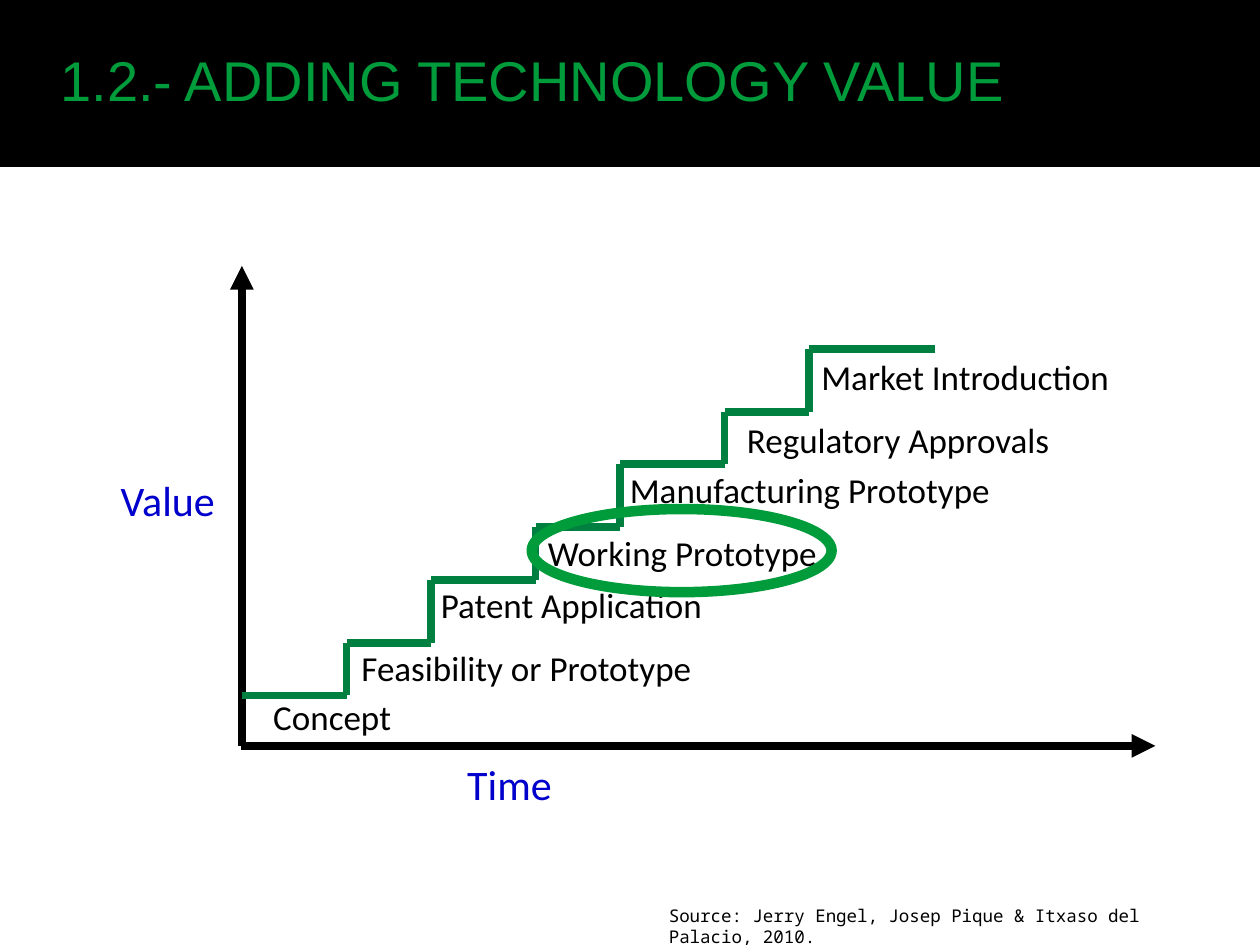
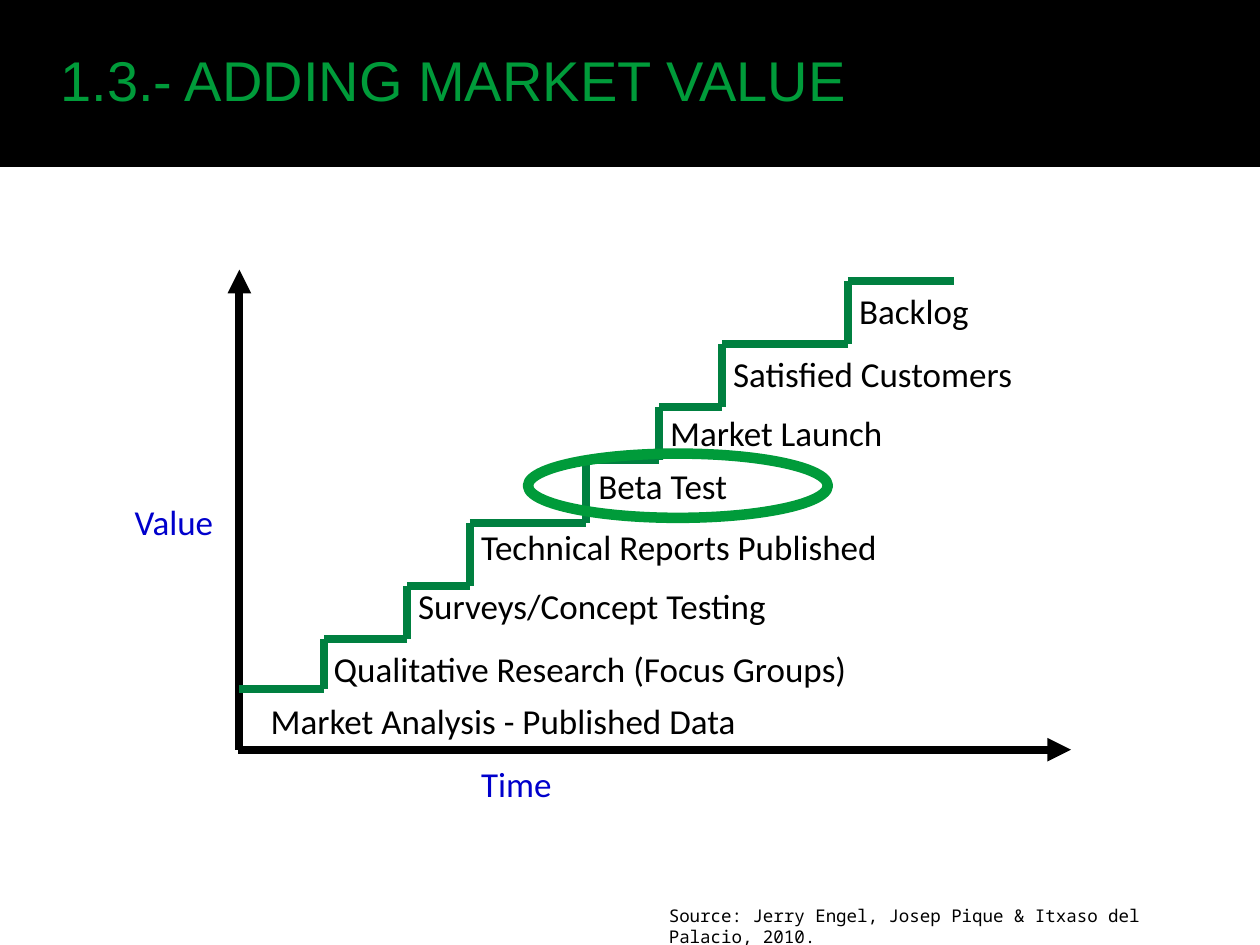
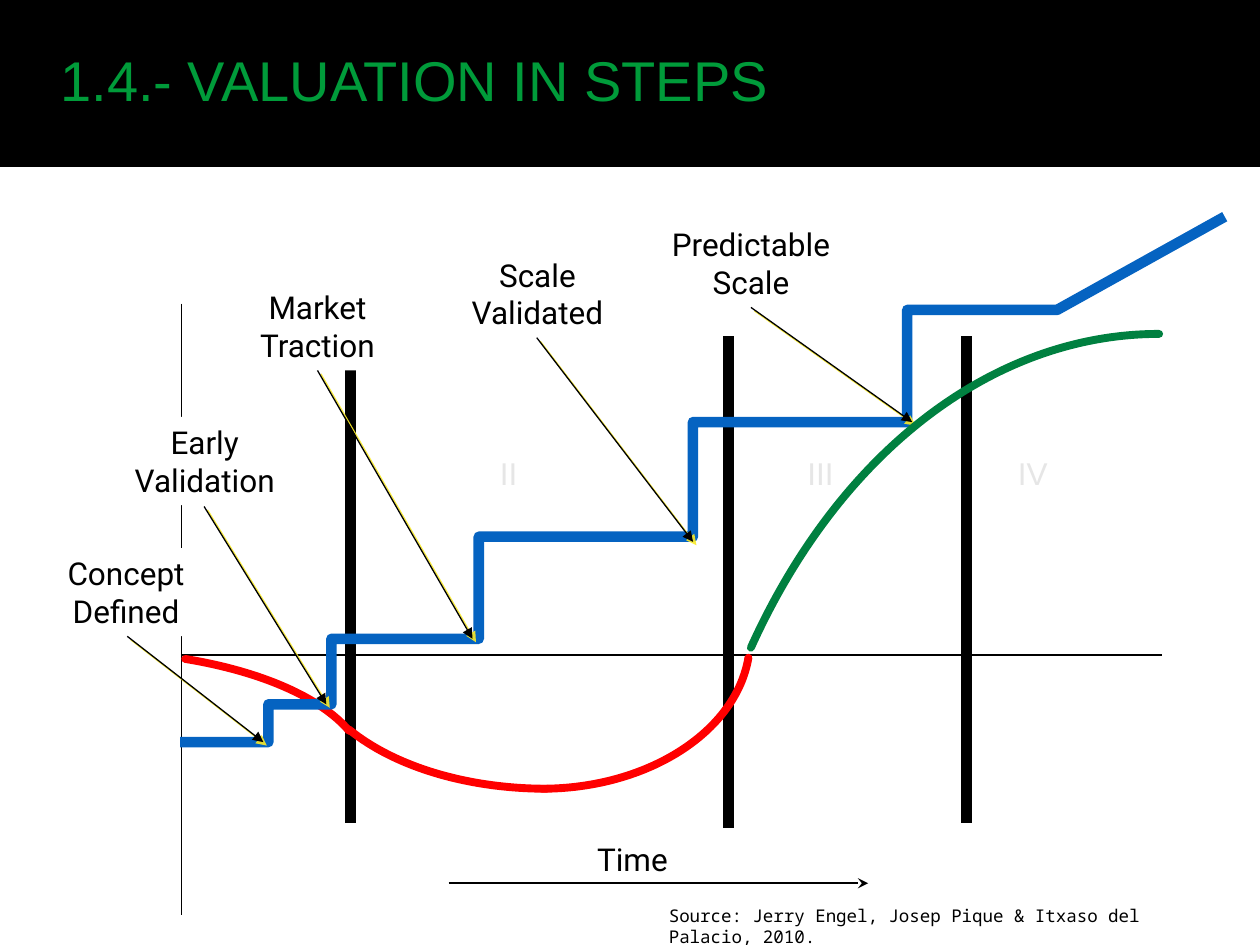
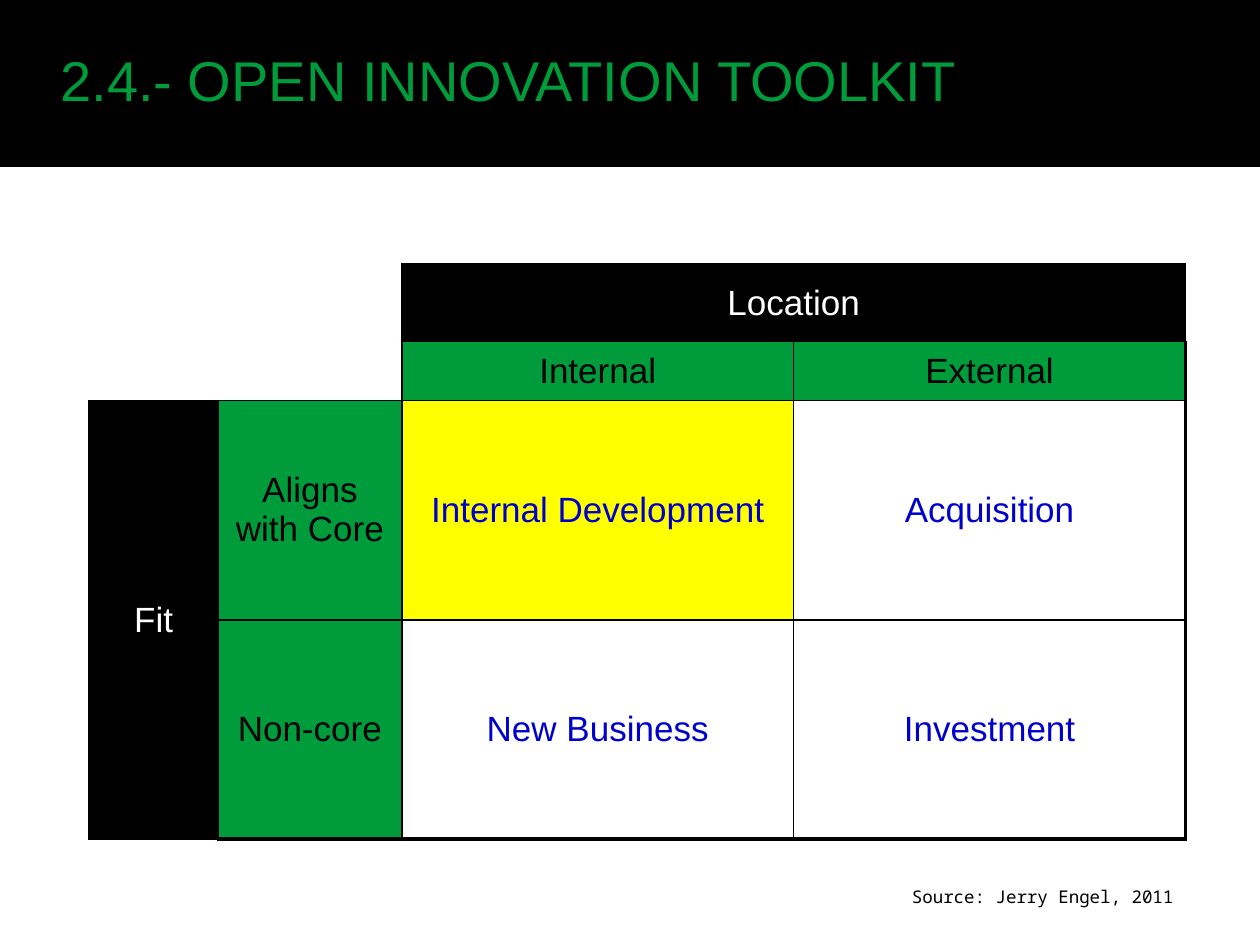
"""Build four slides on adding value in steps and on the open innovation toolkit."""
import pptx
import pptx.util
import pptx.dml.color
import pptx.enum.shapes
import pptx.enum.text
import pptx.oxml.ns
import lxml.etree

PX = 9144
INK = {"black": "000000", "white": "FFFFFF", "green": "009B3A", "step": "008040", "blue": "0000CC",
       "red": "FF0000", "climb": "0563C1", "yellow": "FFFF00", "glow": "F9EA28", "grey": "E6E6E6"}
RGB = {name: pptx.dml.color.RGBColor.from_string(code) for name, code in INK.items()}
Pt = pptx.util.Pt
qn = pptx.oxml.ns.qn
Align = pptx.enum.text.PP_ALIGN
Kind = pptx.enum.shapes.MSO_SHAPE
Fit = pptx.enum.text.MSO_AUTO_SIZE
Sub = lxml.etree.SubElement


def write(slide, words, box, size, font="Calibri", ink="black", align=Align.LEFT, wrap=False):
    """Add a text box in one style."""
    shape = slide.shapes.add_textbox(*[n * PX for n in box])
    frame = shape.text_frame
    frame.text = words
    frame.word_wrap = wrap
    frame.auto_size = Fit.SHAPE_TO_FIT_TEXT
    frame.paragraphs[0].alignment = align
    for run in frame.paragraphs[0].runs:
        run.font.size, run.font.name, run.font.color.rgb = Pt(size), font, RGB[ink]
    return shape


def draw(slide, ends, width, ink="black", tip=None, glow=False):
    """Add a straight line, with an arrowhead or a coloured shadow if asked."""
    line = slide.shapes.add_connector(pptx.enum.shapes.MSO_CONNECTOR.STRAIGHT, *[n * PX for n in ends])
    line.line.width = Pt(width)
    line.line.color.rgb = RGB[ink]
    props = line._element.spPr
    if tip:
        Sub(props.find(qn("a:ln")), qn("a:tailEnd"), type=tip)
    effect = Sub(props, qn("a:effectLst"))
    if glow:
        shade = Sub(effect, qn("a:outerShdw"), dist=str(Pt(2.8)), dir="2700000", rotWithShape="0")
        tone = Sub(shade, qn("a:srgbClr"), val=INK["glow"])
        Sub(tone, qn("a:alpha"), val="90000")


deck = pptx.Presentation()
deck.slide_width, deck.slide_height = 1000 * PX, 750 * PX

TITLES = [("1.2.- ADDING TECHNOLOGY VALUE", 776), ("1.3.- ADDING MARKET VALUE", 649),
          ("1.4.- VALUATION IN STEPS", 587), ("2.4.- OPEN INNOVATION TOOLKIT", 737)]
for words, wide in TITLES:
    slide = deck.slides.add_slide(deck.slide_layouts[5])
    band = slide.shapes.add_shape(Kind.RECTANGLE, 0, 0, 1000 * PX, 132 * PX)
    band.shadow.inherit = False
    band.fill.solid()
    band.fill.fore_color.rgb = band.line.color.rgb = RGB["black"]
    band.line.width = Pt(1)
    slide.shapes._spTree.insert(2, band._element)
    title = slide.shapes.title
    title.left, title.top, title.width, title.height = 38 * PX, 31 * PX, wide * PX, 64 * PX
    frame = title.text_frame
    frame.text = words
    frame.word_wrap = False
    frame.auto_size = Fit.SHAPE_TO_FIT_TEXT
    frame.vertical_anchor = pptx.enum.text.MSO_ANCHOR.TOP
    frame.paragraphs[0].alignment = Align.LEFT
    font = frame.paragraphs[0].runs[0].font
    font.size, font.name, font.color.rgb = Pt(32), "Arial", RGB["green"]

STAIRS = [
    {"origin": (192, 592), "top": 211, "right": 917, "size": 24,
     "value": (86, 372, 109, 50), "time": (361, 597, 98, 50), "ring": (422, 404, 238, 66),
     "xs": [192, 275, 342, 425, 492, 575, 642, 742],
     "ys": [552, 510, 460, 418, 368, 327, 277],
     "labels": [("Concept", 207, 547, 123), ("Feasibility or Prototype", 277, 508, 302),
                ("Patent Application", 340, 458, 244), ("Working Prototype", 425, 417, 248),
                ("Manufacturing Prototype", 490, 367, 322), ("Regulatory Approvals", 583, 327, 285),
                ("Market Introduction", 642, 277, 257)]},
    {"origin": (190, 595), "top": 214, "right": 850, "size": 20,
     "value": (97, 392, 94, 43), "time": (372, 600, 85, 43), "ring": (419, 360, 238, 51),
     "xs": [190, 257, 323, 373, 465, 523, 573, 673, 757],
     "ys": [547, 507, 465, 415, 365, 323, 273, 223],
     "labels": [("Market Analysis - Published Data", 205, 550, 429),
                ("Qualitative Research (Focus Groups)", 255, 509, 478),
                ("Surveys/Concept Testing", 322, 459, 330), ("Technical Reports Published", 372, 412, 374),
                ("Beta Test", 465, 364, 139), ("Market Launch", 522, 322, 203),
                ("Satisfied Customers", 572, 275, 268), ("Backlog", 672, 225, 119)]},
]
for slide, stair in zip(deck.slides, STAIRS):
    left, base = stair["origin"]
    draw(slide, (left, base, left, stair["top"]), 4.5, tip="triangle")
    draw(slide, (left - 1, base, stair["right"], base), 4.5, tip="triangle")
    write(slide, "Value", stair["value"], stair["size"], ink="blue")
    write(slide, "Time", stair["time"], stair["size"], ink="blue")
    for words, x, y, wide in stair["labels"]:
        write(slide, words, (x, y, wide, 43), 20)
    xs, ys = stair["xs"], stair["ys"]
    for i, y in enumerate(ys):
        if i:
            draw(slide, (xs[i], y, xs[i], ys[i - 1]), 4.5, "step")
        draw(slide, (xs[i], y, xs[i + 1], y), 4.5, "step")
    ring = slide.shapes.add_shape(Kind.OVAL, *[n * PX for n in stair["ring"]])
    ring.shadow.inherit = False
    ring.fill.background()
    ring.line.color.rgb = RGB["green"]
    ring.line.width = Pt(6)

slide = deck.slides[2]
for words, x in [("II", 387), ("III", 631), ("IV", 798)]:
    write(slide, words, (x, 355, 70, 39), 18, "Arial", "grey")
for x, top, end in [(278, 264, 653), (578, 267, 657), (767, 267, 653)]:
    draw(slide, (x, top, x, end), 6)
draw(slide, (144, 241, 144, 726), 1)
draw(slide, (144, 520, 922, 520), 1)
write(slide, "Time", (464, 662, 82, 40), 18, "Roboto")
draw(slide, (356, 701, 689, 701), 1, tip="stealth")

CURVES = [("red", [(147, 523), (208, 533), (255, 554), (277, 580)]),
          ("red", [(277, 579), (314, 609), (372, 626), (434, 626)]),
          ("red", [(430, 626), (514, 626), (584, 581), (594, 522)]),
          ("climb", [(143, 589), (213, 589), (213, 559), (263, 559), (263, 507), (380, 507), (380, 426),
                     (550, 426), (550, 335), (720, 335), (720, 246), (839, 246), (972, 172)]),
          ("step", [(596, 514), (666, 359), (788, 265), (920, 265)])]
for ink, dots in CURVES:
    pen = slide.shapes.build_freeform(*dots[0], scale=PX)
    pen.add_line_segments(dots[1:], close=False)
    curve = pen.convert_to_shape()
    curve.shadow.inherit = False
    curve.fill.background()
    curve.line.color.rgb = RGB[ink]
    curve.line.width = Pt(6 if ink == "climb" else 4.5)
    stroke = curve._element.spPr.find(qn("a:ln"))
    Sub(stroke, qn("a:round"))
    if ink != "climb":
        stroke.set("cap", "rnd")
        parts = curve._element.xpath(".//a:lnTo")
        trace = parts[0].getparent()
        bend = Sub(trace, qn("a:cubicBezTo"))
        for part in parts:
            bend.append(part[0])
            trace.remove(part)

STAGES = [("Concept\vDefined", 39, 435, 122, (101, 505, 209, 589)),
          ("Early\vValidation", 89, 331, 147, (162, 402, 259, 559)),
          ("Market\vTraction", 190, 224, 124, (252, 294, 375, 507)),
          ("Scale\vValidated", 357, 198, 139, (426, 268, 550, 430)),
          ("Predictable\vScale", 515, 174, 162, (596, 244, 724, 335))]
for words, x, y, wide, ends in STAGES:
    label = write(slide, words, (x, y, wide, 70), 18, "Roboto", align=Align.CENTER)
    label.fill.solid()
    label.fill.fore_color.rgb = RGB["white"]
    draw(slide, ends, 0.75, tip="triangle", glow=True)
slide.shapes._spTree.append(curve._element)

for slide in list(deck.slides)[:3]:
    write(slide, "Source: Jerry Engel, Josep Pique & Itxaso del Palacio, 2010.",
          (521, 713, 395, 27), 10, "Noto Sans Mono", wrap=True)

slide = deck.slides[3]
grid = slide.shapes.add_table(4, 4, 71 * PX, 210 * PX, 870 * PX, 456 * PX).table
grid.first_row = grid.horz_banding = False
for col, wide in zip(grid.columns, [102, 146, 311, 311]):
    col.width = wide * PX
for row, high in zip(grid.rows, [61, 47, 174, 174]):
    row.height = high * PX
for first, last in [((0, 0), (1, 1)), ((0, 2), (0, 3)), ((2, 0), (3, 0))]:
    grid.cell(*first).merge(grid.cell(*last))
CELLS = [[None, None, ("Location", "black", "white"), None],
         [None, None, ("Internal", "green", "black"), ("External", "green", "black")],
         [("Fit", "black", "white"), ("Aligns with Core", "green", "black"),
          ("Internal Development", "yellow", "blue"), ("Acquisition", None, "blue")],
         [None, ("Non-core", "green", "black"), ("New Business", None, "blue"),
          ("Investment", None, "blue")]]
for r, row in enumerate(CELLS):
    for c, item in enumerate(row):
        cell = grid.cell(r, c)
        blank = r < 2 and c < 2
        edges = {"L": 2.25 if c == 0 else 1, "R": 2.25 if c == 3 else 1,
                 "T": 2.25 if r == 0 else 1, "B": 2.25 if r == 3 else 1}
        if blank:
            edges = {"L": 0, "R": c, "T": 0, "B": r}
        props = cell._tc.get_or_add_tcPr()
        for side, width in edges.items():
            edge = Sub(props, qn("a:ln" + side), w=str(Pt(width)))
            if width:
                Sub(Sub(edge, qn("a:solidFill")), qn("a:srgbClr"), val=INK["black"])
            else:
                Sub(edge, qn("a:noFill"))
        cell.fill.background()
        if item:
            words, fill, ink = item
            if fill:
                cell.fill.solid()
                cell.fill.fore_color.rgb = RGB[fill]
            cell.vertical_anchor = pptx.enum.text.MSO_ANCHOR.MIDDLE
            cell.text_frame.text = words
            para = cell.text_frame.paragraphs[0]
            para.alignment = Align.CENTER
            font = para.runs[0].font
            font.size, font.name, font.color.rgb = Pt(20), "Arial", RGB[ink]
write(slide, "Source: Jerry Engel, 2011", (449, 698, 492, 27), 10, "Noto Sans Mono",
      align=Align.RIGHT, wrap=True)

deck.save("out.pptx")
